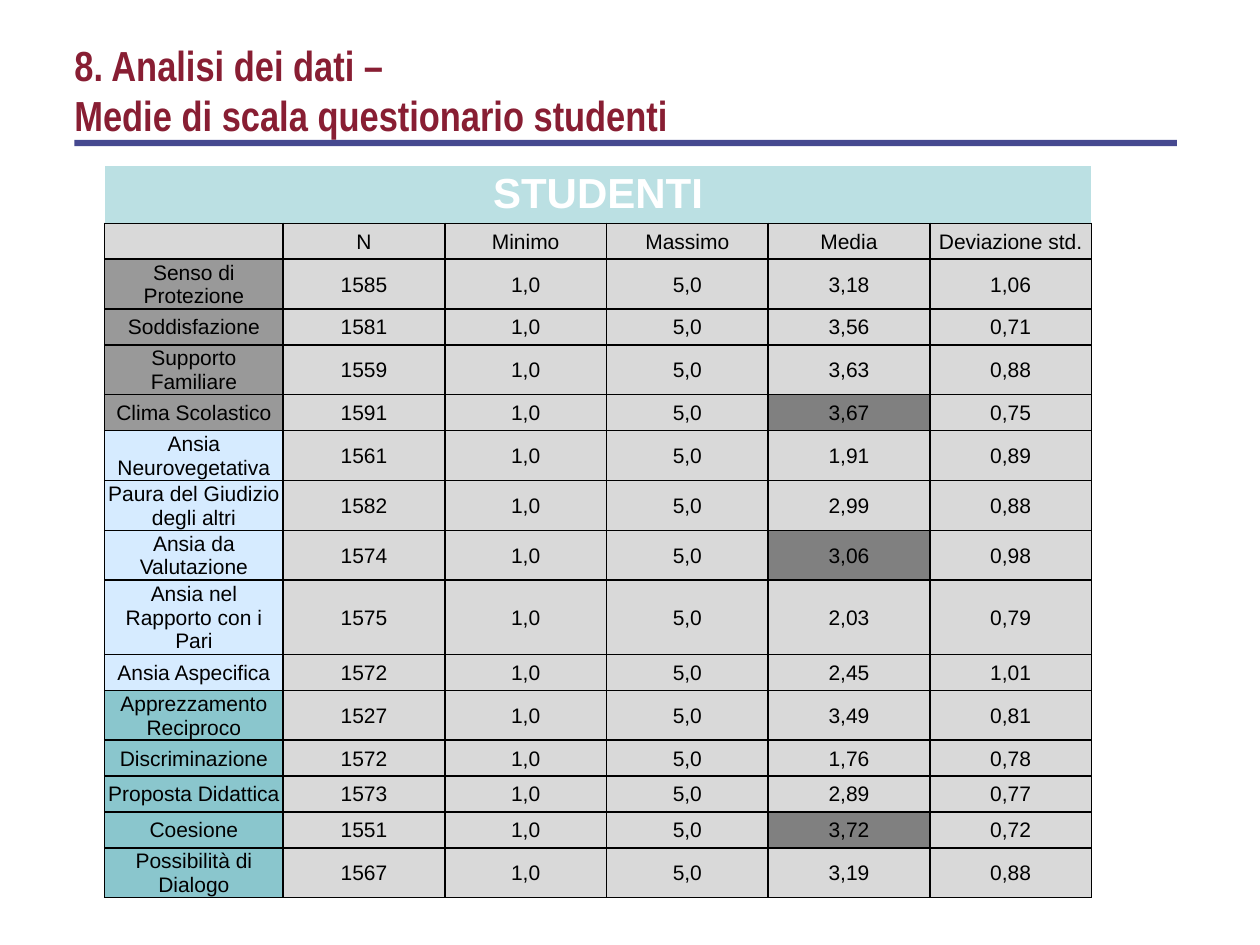
from lxml import etree
from pptx import Presentation
from pptx.dml.color import RGBColor
from pptx.enum.shapes import MSO_SHAPE
from pptx.enum.text import MSO_ANCHOR, MSO_AUTO_SIZE, PP_ALIGN
from pptx.oxml.ns import qn
from pptx.util import Pt

RECTANGLE = MSO_SHAPE.RECTANGLE
BOTTOM, MIDDLE = MSO_ANCHOR.BOTTOM, MSO_ANCHOR.MIDDLE
LEFT, CENTER = PP_ALIGN.LEFT, PP_ALIGN.CENTER
NO_AUTOFIT = MSO_AUTO_SIZE.NONE
TITLE_ONLY = 5

COLORS = {
    "title": "881E33", "bar": "464990", "banner": "BBE0E3", "white": "FFFFFF",
    "black": "000000", "cell": "D9D9D9", "highlight": "808080",
    "wellbeing": "999999", "anxiety": "D6EBFF", "relations": "8AC6CD",
}

HEADINGS = ["", "N", "Minimo", "Massimo", "Media", "Deviazione std."]
# Scale group, scale, N, mean, standard deviation, lines taken by the label
SCALES = [
    ("wellbeing", "Senso di Protezione", "1585", "3,18", "1,06", 2),
    ("wellbeing", "Soddisfazione", "1581", "3,56", "0,71", 1),
    ("wellbeing", "Supporto Familiare", "1559", "3,63", "0,88", 2),
    ("wellbeing", "Clima Scolastico", "1591", "3,67", "0,75", 1),
    ("anxiety", "Ansia Neurovegetativa", "1561", "1,91", "0,89", 2),
    ("anxiety", "Paura del Giudizio degli altri", "1582", "2,99", "0,88", 2),
    ("anxiety", "Ansia da Valutazione", "1574", "3,06", "0,98", 2),
    ("anxiety", "Ansia nel Rapporto con i Pari", "1575", "2,03", "0,79", 3),
    ("anxiety", "Ansia Aspecifica", "1572", "2,45", "1,01", 1),
    ("relations", "Apprezzamento Reciproco", "1527", "3,49", "0,81", 2),
    ("relations", "Discriminazione", "1572", "1,76", "0,78", 1),
    ("relations", "Proposta Didattica", "1573", "2,89", "0,77", 1),
    ("relations", "Coesione", "1551", "3,72", "0,72", 1),
    ("relations", "Possibilità di Dialogo", "1567", "3,19", "0,88", 2),
]
MINIMUM, MAXIMUM = "1,0", "5,0"
HIGHLIGHTED = {"Clima Scolastico", "Ansia da Valutazione", "Coesione"}
MEAN_COLUMN = HEADINGS.index("Media")
BANNER_HEIGHT = 33
ROW_HEIGHTS = {1: 20.5, 2: 28.5, 3: 42.5}


def rgb(name):
    return RGBColor.from_string(COLORS[name])


def add_run(paragraph, text, font, size, color, bold=False):
    run = paragraph.add_run()
    run.text = text
    run.font.name = font
    run.font.size = Pt(size)
    run.font.bold = bold
    run.font.color.rgb = rgb(color)


def set_borders(cell, left="black", right="black", top="black", bottom="black"):
    properties = cell._tc.get_or_add_tcPr()
    sides = (("a:lnL", left), ("a:lnR", right), ("a:lnT", top), ("a:lnB", bottom))
    for tag, color in sides:
        line = etree.SubElement(properties, qn(tag), w=str(Pt(1)))
        fill = etree.SubElement(line, qn("a:solidFill"))
        etree.SubElement(fill, qn("a:srgbClr"), val=COLORS[color])


def fill_cell(cell, text, fill):
    """Write one body cell with tight margins."""
    set_borders(cell)
    cell.fill.solid()
    cell.fill.fore_color.rgb = rgb(fill)
    cell.margin_left = cell.margin_right = cell.margin_top = Pt(0.7)
    cell.margin_bottom = 0
    cell.vertical_anchor = MIDDLE
    paragraph = cell.text_frame.paragraphs[0]
    paragraph.alignment = CENTER
    if text:
        add_run(paragraph, text, "Arial", 12, "black")
    else:
        # Keeps an empty cell from stretching its row
        etree.SubElement(paragraph._p, qn("a:endParaRPr"), sz="1200")


def add_title(slide, left, top, width, height):
    title = slide.shapes.title
    title.left, title.top = Pt(left), Pt(top)
    title.width, title.height = Pt(width), Pt(height)
    frame = title.text_frame
    frame.margin_left = frame.margin_right = 0
    frame.margin_top = frame.margin_bottom = 0
    frame.word_wrap = True
    frame.auto_size = NO_AUTOFIT
    frame.vertical_anchor = BOTTOM
    paragraph = frame.paragraphs[0]
    paragraph.alignment = LEFT
    add_run(paragraph, "8. Analisi dei dati –", "Arial Narrow", 24, "title", True)
    paragraph.add_line_break()
    add_run(paragraph, "Medie di scala questionario studenti",
            "Arial Narrow", 24, "title", True)

    # Bar below the title, kept behind its descenders
    bar = slide.shapes.add_shape(RECTANGLE, Pt(left), Pt(top + height),
                                 Pt(width), Pt(3.6))
    bar.shadow.inherit = False
    bar.fill.solid()
    bar.fill.fore_color.rgb = rgb("bar")
    bar.line.fill.background()
    title.element.addprevious(bar.element)


def add_scale_table(slide, left, top, width, label_width):
    heights = [BANNER_HEIGHT, ROW_HEIGHTS[1]]
    heights += [ROW_HEIGHTS[scale[-1]] for scale in SCALES]
    column_count = len(HEADINGS)
    table = slide.shapes.add_table(len(heights), column_count, Pt(left), Pt(top),
                                   Pt(width), Pt(sum(heights))).table
    table.first_row = table.horz_banding = False
    for row, height in zip(table.rows, heights):
        row.height = Pt(height)
    for index, column in enumerate(table.columns):
        value_width = (width - label_width) / (column_count - 1)
        column.width = Pt(value_width if index else label_width)

    # Banner across all columns
    for index in range(column_count):
        set_borders(table.cell(0, index), "white", "white", "white")
    banner = table.cell(0, 0)
    banner.merge(table.cell(0, column_count - 1))
    banner.fill.solid()
    banner.fill.fore_color.rgb = rgb("banner")
    banner.margin_top = banner.margin_bottom = Pt(2.7)
    paragraph = banner.text_frame.paragraphs[0]
    paragraph.alignment = CENTER
    add_run(paragraph, "STUDENTI", "Arial", 24, "white", True)

    # Column headings
    for index, heading in enumerate(HEADINGS):
        fill_cell(table.cell(1, index), heading, "cell")

    # One row for each scale
    for row, (group, name, count, mean, deviation, _) in enumerate(SCALES, 2):
        values = [name, count, MINIMUM, MAXIMUM, mean, deviation]
        fills = [group] + ["cell"] * (column_count - 1)
        if name in HIGHLIGHTED:
            fills[MEAN_COLUMN] = "highlight"
        for index, (value, fill) in enumerate(zip(values, fills)):
            fill_cell(table.cell(row, index), value, fill)


def main():
    presentation = Presentation()
    presentation.slide_width, presentation.slide_height = Pt(720), Pt(540)
    slide = presentation.slides.add_slide(presentation.slide_layouts[TITLE_ONLY])
    add_title(slide, 42.5, 8, 630, 72)
    add_scale_table(slide, 59.8, 94.6, 564, 102)
    presentation.save("out.pptx")


if __name__ == "__main__":
    main()
